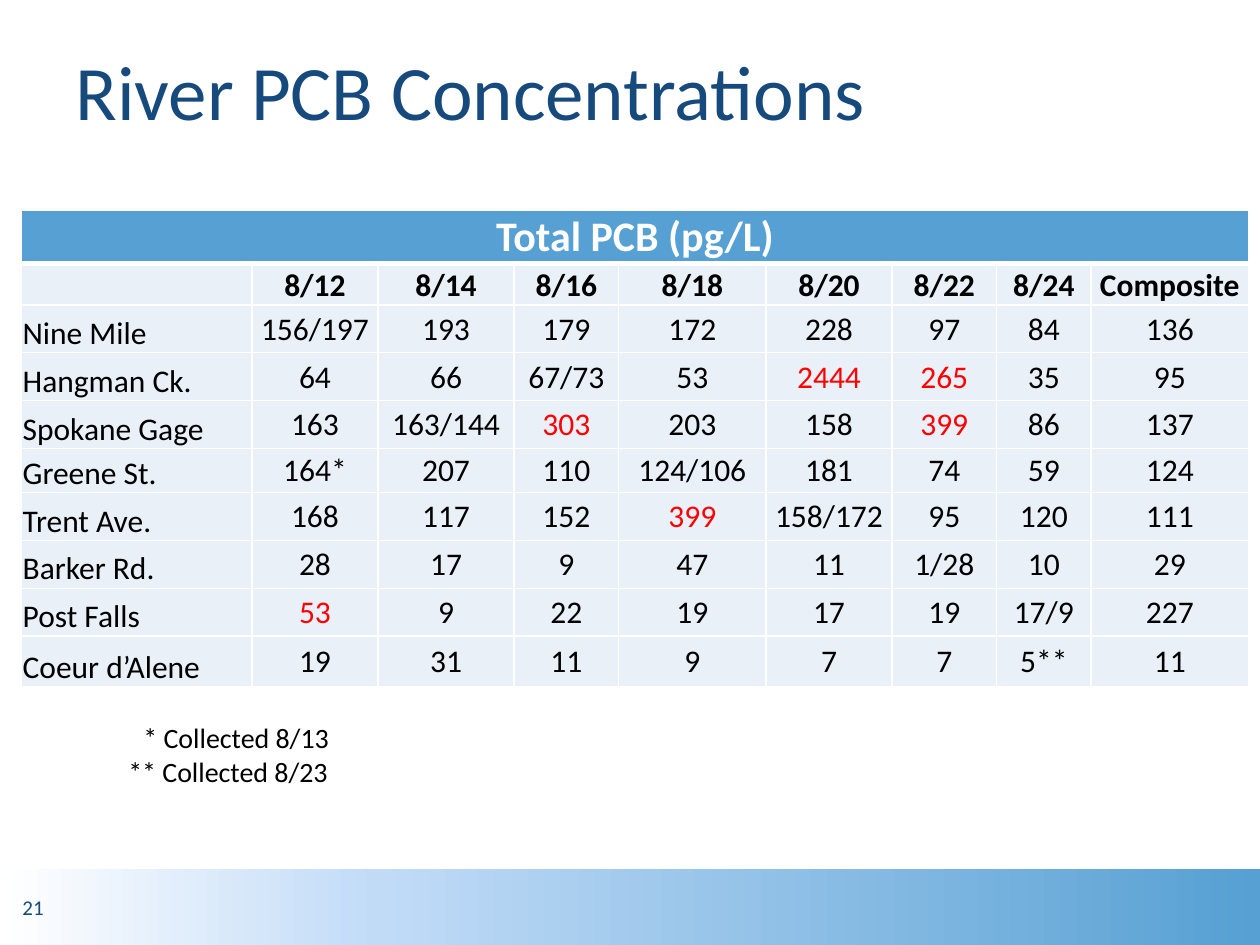
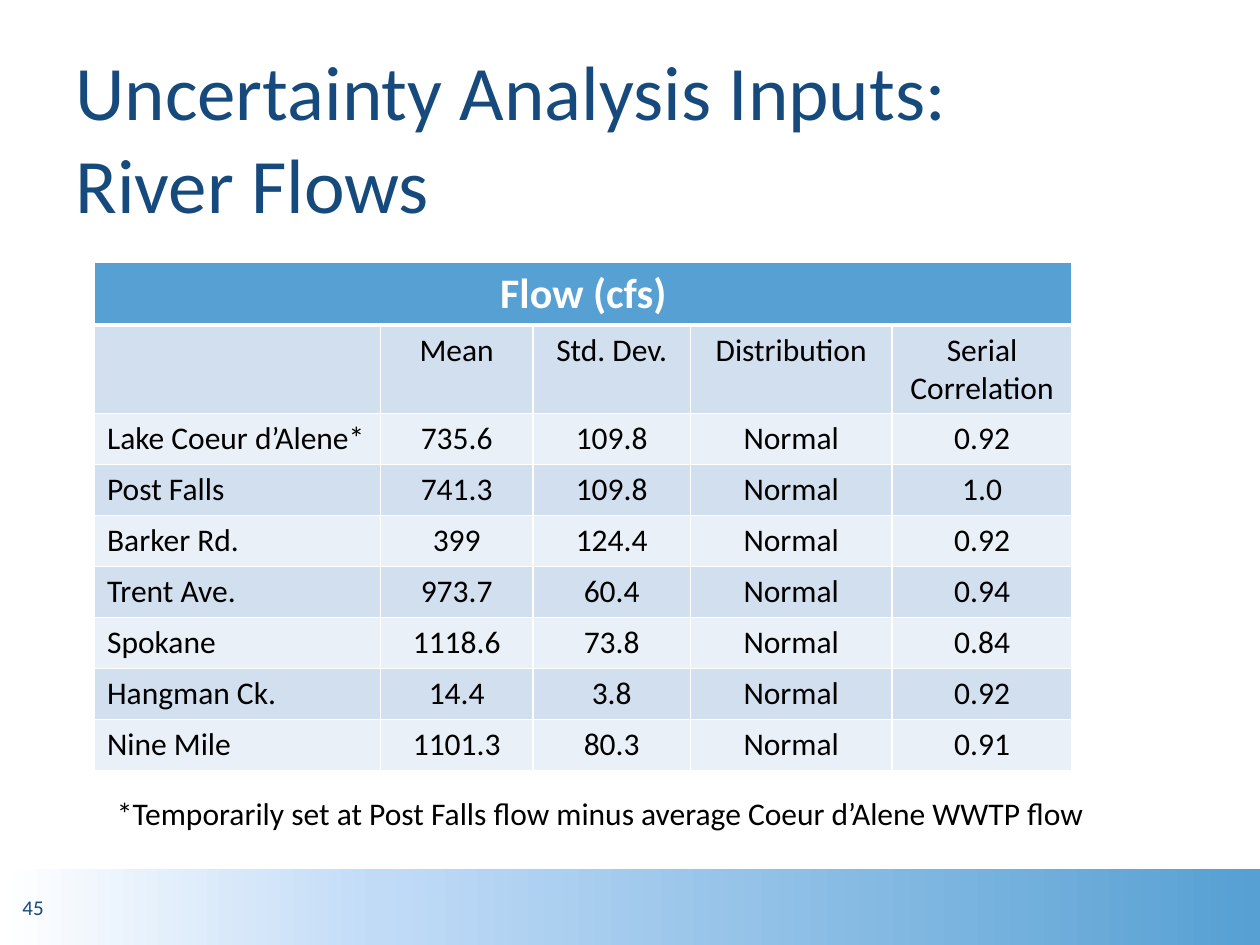
"""Build two slides of river monitoring tables."""
from copy import deepcopy
from dataclasses import dataclass

from lxml import etree
from pptx import Presentation
from pptx.dml.color import RGBColor
from pptx.enum.shapes import MSO_SHAPE
from pptx.enum.text import MSO_ANCHOR, PP_ALIGN
from pptx.oxml.ns import qn
from pptx.util import Inches, Pt

RECT = MSO_SHAPE.RECTANGLE
TOP, MIDDLE, BOTTOM = MSO_ANCHOR.TOP, MSO_ANCHOR.MIDDLE, MSO_ANCHOR.BOTTOM
LEFT, CENTER = PP_ALIGN.LEFT, PP_ALIGN.CENTER

FONT = "Calibri"
NAVY, BLUE, WHITE, BLACK, RED = "174A7C", "56A0D3", "FFFFFF", "000000", "FF0000"
PALE, LIGHT = "E9F0F7", "D1DFEF"
BAND_STOPS = ((0, WHITE), (0.3, "C1DBF7"), (1, BLUE))


@dataclass(frozen=True)
class TableSpec:
    """Content and format of one data table; rows exclude the heading."""
    heading: str
    rows: list[list[str]]
    left: float
    top: float
    widths: list[float]
    heights: list[float]
    fills: tuple[str, str]
    insets: tuple[float, float, float, float] = (0.1, 0.05, 0.1, 0.05)
    heading_anchor: MSO_ANCHOR = MIDDLE
    header_anchor: MSO_ANCHOR = TOP
    label_anchor: MSO_ANCHOR = TOP
    value_anchor: MSO_ANCHOR = TOP
    bold_header: bool = False
    outliers: frozenset[tuple[str, str]] = frozenset()


@dataclass(frozen=True)
class SlideSpec:
    """Everything that differs from slide to slide."""
    title: str
    number: str
    table: TableSpec
    note: str
    note_box: tuple[float, float, float, float]
    note_size: int
    note_indent: float = 0


PCB_TABLE = TableSpec(
    heading="Total PCB (pg/L)",
    rows=[
        ["", "8/12", "8/14", "8/16", "8/18", "8/20", "8/22", "8/24", "Composite"],
        ["Nine Mile", "156/197", "193", "179", "172", "228", "97", "84", "136"],
        ["Hangman Ck.", "64", "66", "67/73", "53", "2444", "265", "35", "95"],
        ["Spokane Gage", "163", "163/144", "303", "203", "158", "399", "86", "137"],
        ["Greene St.", "164*", "207", "110", "124/106", "181", "74", "59", "124"],
        ["Trent Ave.", "168", "117", "152", "399", "158/172", "95", "120", "111"],
        ["Barker Rd.", "28", "17", "9", "47", "11", "1/28", "10", "29"],
        ["Post Falls", "53", "9", "22", "19", "17", "19", "17/9", "227"],
        ["Coeur d’Alene", "19", "31", "11", "9", "7", "7", "5**", "11"],
    ],
    left=0.17, top=1.67,
    widths=[1.83, 1, 1.08, 0.83, 1.17, 1, 0.83, 0.75, 1.25],
    heights=[0.42, 0.33, 0.38, 0.38, 0.38, 0.35, 0.38, 0.38, 0.38, 0.4],
    fills=(PALE, PALE),
    insets=(0.01, 0.01, 0.01, 0),
    heading_anchor=BOTTOM, header_anchor=BOTTOM,
    label_anchor=BOTTOM, value_anchor=MIDDLE,
    bold_header=True,
    outliers=frozenset({
        ("Hangman Ck.", "8/20"), ("Hangman Ck.", "8/22"),
        ("Spokane Gage", "8/16"), ("Spokane Gage", "8/22"),
        ("Trent Ave.", "8/18"), ("Post Falls", "8/12"),
    }),
)

FLOW_TABLE = TableSpec(
    heading="Flow (cfs)",
    rows=[
        ["", "Mean", "Std. Dev.", "Distribution", "Serial Correlation"],
        ["Lake Coeur d’Alene*", "735.6", "109.8", "Normal", "0.92"],
        ["Post Falls", "741.3", "109.8", "Normal", "1.0"],
        ["Barker Rd.", "399", "124.4", "Normal", "0.92"],
        ["Trent Ave.", "973.7", "60.4", "Normal", "0.94"],
        ["Spokane", "1118.6", "73.8", "Normal", "0.84"],
        ["Hangman Ck.", "14.4", "3.8", "Normal", "0.92"],
        ["Nine Mile", "1101.3", "80.3", "Normal", "0.91"],
    ],
    left=0.75, top=2.08,
    widths=[2.27, 1.21, 1.25, 1.6, 1.43],
    heights=[0.49, 0.7] + [0.405] * 7,
    fills=(LIGHT, PALE),
)

SLIDES = [
    SlideSpec("River PCB Concentrations", "21", PCB_TABLE,
              "* Collected 8/13\n** Collected 8/23",
              (0.92, 5.67, 6.25, 0.67), 16, note_indent=0.12),
    SlideSpec("Uncertainty Analysis Inputs:\vRiver Flows", "45", FLOW_TABLE,
              "*Temporarily set at Post Falls flow minus average Coeur d’Alene WWTP flow",
              (0.83, 6.25, 7.92, 0.4), 18),
]


def rgb(color: str) -> RGBColor:
    """Turn a hex string into a colour."""
    return RGBColor.from_string(color)


def write(tf, text: str, *, size: float = 18, color: str = BLACK,
          bold: bool = False, align: PP_ALIGN = LEFT) -> None:
    """Fill a text frame, one paragraph for each line of text."""
    for i, line in enumerate(text.split("\n")):
        p = tf.add_paragraph() if i else tf.paragraphs[0]
        p.text = line
        p.alignment = align
        for r in p.runs:
            r.font.name = FONT
            r.font.size = Pt(size)
            r.font.bold = bold
            r.font.color.rgb = rgb(color)


def add_text(s, box: tuple[float, float, float, float], text: str,
             anchor: MSO_ANCHOR = TOP, **fmt):
    """Add a wrapping text box and return its text frame."""
    tf = s.shapes.add_textbox(*map(Inches, box)).text_frame
    tf.word_wrap = True
    tf.vertical_anchor = anchor
    write(tf, text, **fmt)
    return tf


def add_band(s) -> None:
    """Draw the gradient band along the foot of the slide."""
    sp = s.shapes.add_shape(RECT, 0, Inches(6.9), Inches(10), Inches(0.6))
    sp.shadow.inherit = False
    sp.line.fill.background()
    sp.fill.gradient()
    sp.fill.gradient_angle = 0
    stop_list = sp._element.spPr.find(".//" + qn("a:gsLst"))
    stop_list.append(deepcopy(stop_list[0]))
    for stop, (position, color) in zip(sp.fill.gradient_stops, BAND_STOPS):
        stop.position = position
        stop.color.rgb = rgb(color)


def set_borders(cell, top: float, bottom: float) -> None:
    """Give a cell white borders of the given point widths."""
    tc_pr = cell._tc.get_or_add_tcPr()
    for side, width in (("L", 1), ("R", 1), ("T", top), ("B", bottom)):
        ln = etree.SubElement(tc_pr, qn(f"a:ln{side}"), w=str(Pt(width)))
        fill = etree.SubElement(ln, qn("a:solidFill"))
        etree.SubElement(fill, qn("a:srgbClr"), val=WHITE)


def format_cell(cell, spec: TableSpec, fill: str, anchor: MSO_ANCHOR,
                top: float = 1, bottom: float = 1) -> None:
    """Set borders, fill, anchor and insets of a cell."""
    set_borders(cell, top, bottom)
    cell.fill.solid()
    cell.fill.fore_color.rgb = rgb(fill)
    cell.vertical_anchor = anchor
    (cell.margin_left, cell.margin_top,
     cell.margin_right, cell.margin_bottom) = map(Inches, spec.insets)


def add_data_table(s, spec: TableSpec) -> None:
    """Draw a table with a merged heading, a header row and data rows."""
    table = s.shapes.add_table(
        len(spec.heights), len(spec.widths), Inches(spec.left), Inches(spec.top),
        Inches(sum(spec.widths)), Inches(sum(spec.heights))).table
    table.first_row = table.horz_banding = False
    for column, width in zip(table.columns, spec.widths):
        column.width = Inches(width)
    for row, height in zip(table.rows, spec.heights):
        row.height = Inches(height)

    for cell in table.rows[0].cells:
        format_cell(cell, spec, BLUE, spec.heading_anchor, bottom=3)
    table.cell(0, 0).merge(table.cell(0, len(spec.widths) - 1))
    write(table.cell(0, 0).text_frame, spec.heading,
          size=24, color=WHITE, bold=True, align=CENTER)

    header = spec.rows[0]
    for i, values in enumerate(spec.rows):
        for j, value in enumerate(values):
            cell = table.cell(i + 1, j)
            body_anchor = spec.value_anchor if j else spec.label_anchor
            format_cell(cell, spec, spec.fills[i % 2],
                        body_anchor if i else spec.header_anchor,
                        top=1 if i else 3)
            outlier = (values[0], header[j]) in spec.outliers
            write(cell.text_frame, value, color=RED if outlier else BLACK,
                  bold=spec.bold_header and i == 0,
                  align=CENTER if j else LEFT)


def add_slide(prs, spec: SlideSpec) -> None:
    """Add one slide with its band, title, table, note and number."""
    s = prs.slides.add_slide(prs.slide_layouts[6])
    add_band(s)
    add_text(s, (0.5, 0.3, 8.5, 1.25), spec.title, size=44, color=NAVY)
    add_data_table(s, spec.table)
    tf = add_text(s, spec.note_box, spec.note, size=spec.note_size)
    if spec.note_indent:
        tf.paragraphs[0]._p.get_or_add_pPr().set("marL", str(Inches(spec.note_indent)))
    add_text(s, (0.08, 7, 2.33, 0.4), spec.number, MIDDLE, size=12, color=NAVY)


def main() -> None:
    """Build and save the presentation."""
    prs = Presentation()
    prs.slide_width, prs.slide_height = Inches(10), Inches(7.5)
    for spec in SLIDES:
        add_slide(prs, spec)
    prs.save("out.pptx")


if __name__ == "__main__":
    main()
